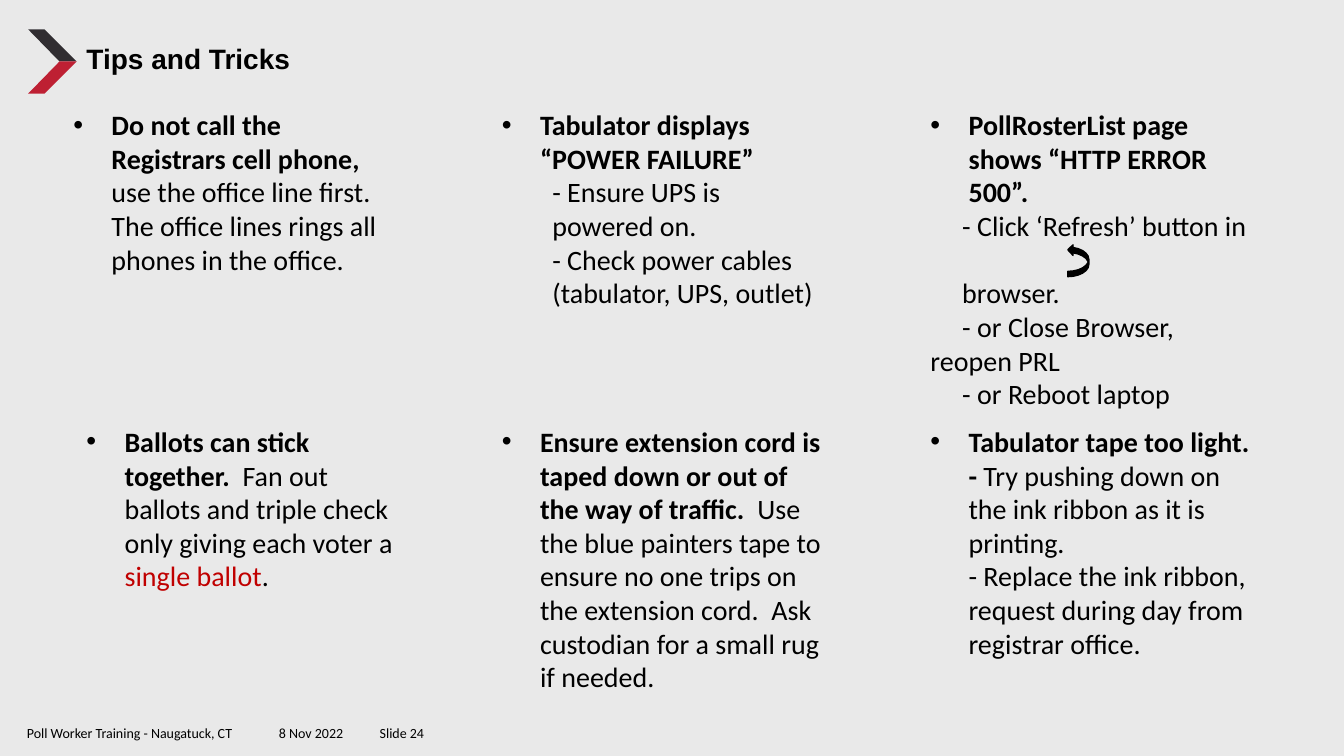
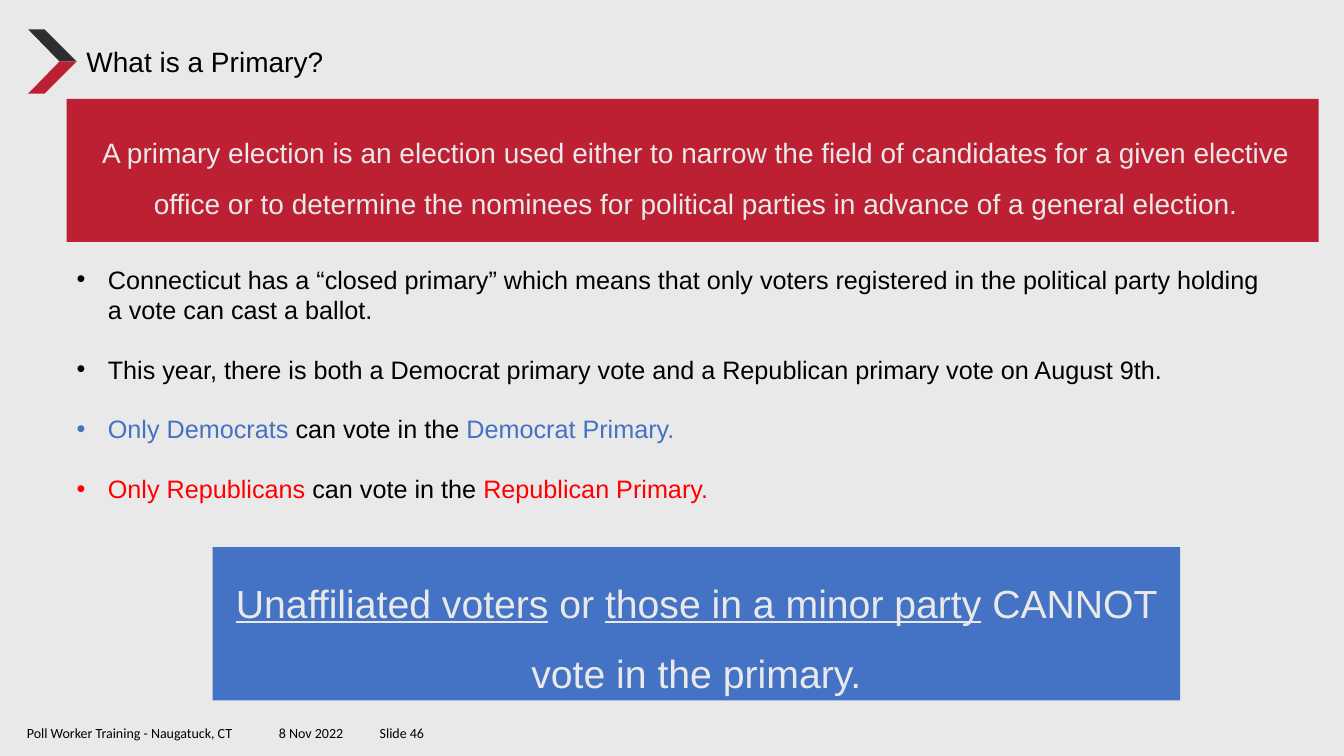
from dataclasses import dataclass
from typing import Optional

from lxml import etree
from pptx import Presentation
from pptx import util as u
from pptx.dml import color
from pptx.enum import shapes, text
from pptx.oxml import ns

PAPER, INK = "E9E9E9", "000000"
CHARCOAL, CRIMSON, BLUE = "302D31", "BE2033", "4472C4"
DARK_RED, RED = "C00000", "FF0000"
HEADING_FONT, BODY_FONT = "Arial", "Calibri"
COLUMN_LEFT, COLUMN_PITCH, COLUMN_WIDTH = 1.6, 10.8, 8.56
ROW_TOPS = (2.59, 10.57)
DATE_TAB, NUMBER_TAB = 15.21, 30.46


@dataclass(frozen=True)
class Box:
    left: float
    top: float
    width: float
    height: float

    def lengths(self) -> tuple:
        return u.Cm(self.left), u.Cm(self.top), u.Cm(self.width), u.Cm(self.height)


@dataclass(frozen=True)
class Words:
    content: str
    bold: bool = False
    underline: bool = False
    shade: str = INK


@dataclass(frozen=True)
class Para:
    words: tuple
    bullet: bool = False
    margin: float = 0
    first: float = 0
    before: float = 0
    spacing: Optional[float] = None
    centred: bool = False
    tabs: tuple = ()


@dataclass(frozen=True)
class Tip:
    column: int
    row: int
    height: float
    paras: tuple
    nudge: float = 0


def rgb(value: str) -> color.RGBColor:
    return color.RGBColor.from_string(value)


def bulleted(*words: Words, hang: float = 0.96, before: float = 0) -> Para:
    return Para(words, True, hang, -hang, before)


def detail(content: str, margin: float = 0, first: float = 0, before: float = 0) -> Para:
    return Para((Words(content),), margin=margin, first=first, before=before)


def format_paragraph(paragraph, para: Para) -> None:
    props = paragraph._p.get_or_add_pPr()
    props.set("marL", str(u.Cm(para.margin)))
    props.set("indent", str(u.Cm(para.first)))
    if para.bullet:
        etree.SubElement(props, ns.qn("a:buFont"), typeface="Arial")
        etree.SubElement(props, ns.qn("a:buChar"), char="•")
    if para.tabs:
        stops = etree.SubElement(props, ns.qn("a:tabLst"))
        for stop in para.tabs:
            etree.SubElement(stops, ns.qn("a:tab"), pos=str(u.Cm(stop)), algn="l")
    if para.before:
        paragraph.space_before = u.Pt(para.before)
    if para.spacing:
        paragraph.line_spacing = para.spacing
    if para.centred:
        paragraph.alignment = text.PP_ALIGN.CENTER


def write(slide, box: Box, paras: tuple, size: float, font: str) -> None:
    frame = slide.shapes.add_textbox(*box.lengths()).text_frame
    frame.word_wrap = True
    frame.auto_size = text.MSO_AUTO_SIZE.SHAPE_TO_FIT_TEXT
    for index, para in enumerate(paras):
        paragraph = frame.add_paragraph() if index else frame.paragraphs[0]
        format_paragraph(paragraph, para)
        for words in para.words:
            run = paragraph.add_run()
            run.text = words.content
            run.font.size = u.Pt(size)
            run.font.name = font
            run.font.bold = words.bold
            run.font.underline = words.underline
            run.font.color.rgb = rgb(words.shade)


def paint(shape, fill: str) -> None:
    shape.shadow.inherit = False
    shape.fill.solid()
    shape.fill.fore_color.rgb = rgb(fill)
    shape.line.fill.background()


def draw_band(slide, box: Box, fill: str) -> None:
    paint(slide.shapes.add_shape(shapes.MSO_SHAPE.RECTANGLE, *box.lengths()), fill)


def draw_chevron(slide) -> None:
    middle = 1.55
    for edge, fill in ((0.74, CHARCOAL), (2.36, CRIMSON)):
        corners = [(0.71, edge), (1.12, edge), (1.93, middle), (1.5, middle)]
        points = [(u.Cm(x), u.Cm(y)) for x, y in corners]
        arm = slide.shapes.build_freeform(*points[0])
        arm.add_line_segments(points[1:], close=True)
        paint(arm.convert_to_shape(), fill)


def start_slide(deck, title: str, title_top: float, bold: bool, number: int):
    slide = deck.slides.add_slide(deck.slide_layouts[6])
    slide.background.fill.solid()
    slide.background.fill.fore_color.rgb = rgb(PAPER)
    draw_chevron(slide)
    heading = Para((Words(title, bold),))
    write(slide, Box(1.93, title_top, 21.92, 1.11), (heading,), 20, HEADING_FONT)
    footer = Words(f"Poll Worker Training - Naugatuck, CT\t8 Nov 2022\tSlide {number}")
    footer_line = Para((footer,), tabs=(DATE_TAB, NUMBER_TAB))
    write(slide, Box(0.43, 18.14, 32.51, 0.68), (footer_line,), 10, BODY_FONT)
    return slide


TIPS = (
    Tip(0, 0, 5.39, (
        bulleted(
            Words("Do not call the Registrars cell phone, ", True),
            Words("use the office line first. The office lines rings all phones in the office."),
        ),
    )),
    Tip(1, 0, 5.39, (
        bulleted(Words("Tabulator displays “POWER FAILURE”", True)),
        detail("- Ensure UPS is powered on.", 1.27),
        detail("- Check power cables (tabulator, UPS, outlet)", 1.27),
    )),
    Tip(2, 0, 7.09, (
        bulleted(Words("PollRosterList page shows “HTTP ERROR 500”.", True)),
        detail("- Click ‘Refresh’ button in", first=0.8),
        detail("browser.", first=0.8, before=24),
        detail("- or Close Browser, reopen PRL", first=0.8),
        detail("- or Reboot laptop", first=0.8),
    )),
    Tip(0, 1, 4.52, (
        bulleted(
            Words("Ballots can stick together.  ", True),
            Words("Fan out ballots and triple check only giving each voter a "),
            Words("single ballot", shade=DARK_RED),
            Words("."),
        ),
    ), nudge=0.33),
    Tip(1, 1, 7.09, (
        bulleted(
            Words("Ensure extension cord is taped down or out of the way of traffic.", True),
            Words("  Use the blue painters tape to ensure no one trips on the extension cord.  "
                  "Ask custodian for a small rug if needed."),
        ),
    )),
    Tip(2, 1, 6.25, (
        bulleted(
            Words("Tabulator tape too light. - ", True),
            Words("Try pushing down on the ink ribbon as it is printing."),
        ),
        detail("- Replace the ink ribbon, request during day from registrar office.", 0.96),
    )),
)

PRIMARY_RULES = (
    (Words("Connecticut has a “closed primary” which means that only voters registered "
           "in the political party holding a vote can cast a ballot."),),
    (Words("This year, there is both a Democrat primary vote and a Republican primary "
           "vote on August 9th."),),
    (Words("Only Democrats", shade=BLUE), Words(" can vote in the "),
     Words("Democrat Primary.", shade=BLUE)),
    (Words("Only Republicans", shade=RED), Words(" can vote in the "),
     Words("Republican Primary.", shade=RED)),
)


def build_tips(deck) -> None:
    slide = start_slide(deck, "Tips and Tricks", 0.91, True, 24)
    for tip in TIPS:
        left = COLUMN_LEFT + tip.column * COLUMN_PITCH + tip.nudge
        box = Box(left, ROW_TOPS[tip.row], COLUMN_WIDTH, tip.height)
        write(slide, box, tip.paras, 20, BODY_FONT)
    refresh_arrow = slide.shapes.add_shape(
        shapes.MSO_SHAPE.CURVED_UP_ARROW, *Box(26.77, 6.3, 0.81, 0.53).lengths())
    paint(refresh_arrow, INK)
    refresh_arrow.line.color.rgb = rgb(INK)
    refresh_arrow.line.width = u.Pt(1)
    refresh_arrow.rotation = 270


def build_primary(deck) -> None:
    slide = start_slide(deck, "What is a Primary?", 0.99, False, 46)
    draw_band(slide, Box(1.68, 2.49, 31.55, 3.61), CRIMSON)
    definition = Words(
        "A primary election is an election used either to narrow the field of candidates "
        "for a given elective office or to determine the nominees for political parties "
        "in advance of a general election.", shade=PAPER)
    write(slide, Box(2.18, 2.87, 30.73, 2.82),
          (Para((definition,), spacing=1.5, centred=True),), 20, HEADING_FONT)

    rules = tuple(bulleted(*words, hang=0.79, before=21 if index else 0)
                  for index, words in enumerate(PRIMARY_RULES))
    write(slide, Box(1.68, 6.53, 30.78, 6.4), rules, 18, HEADING_FONT)

    draw_band(slide, Box(5.36, 13.79, 24.38, 3.86), BLUE)
    warning = (
        Words("Unaffiliated voters", underline=True, shade=PAPER),
        Words(" or ", shade=PAPER),
        Words("those in a minor party", underline=True, shade=PAPER),
        Words(" CANNOT vote in the primary.", shade=PAPER),
    )
    write(slide, Box(5.36, 13.87, 24.38, 3.84),
          (Para(warning, spacing=1.5, centred=True),), 28, HEADING_FONT)


def main() -> None:
    deck = Presentation()
    deck.slide_width, deck.slide_height = u.Cm(33.87), u.Cm(19.05)
    build_tips(deck)
    build_primary(deck)
    deck.save("out.pptx")


if __name__ == "__main__":
    main()
